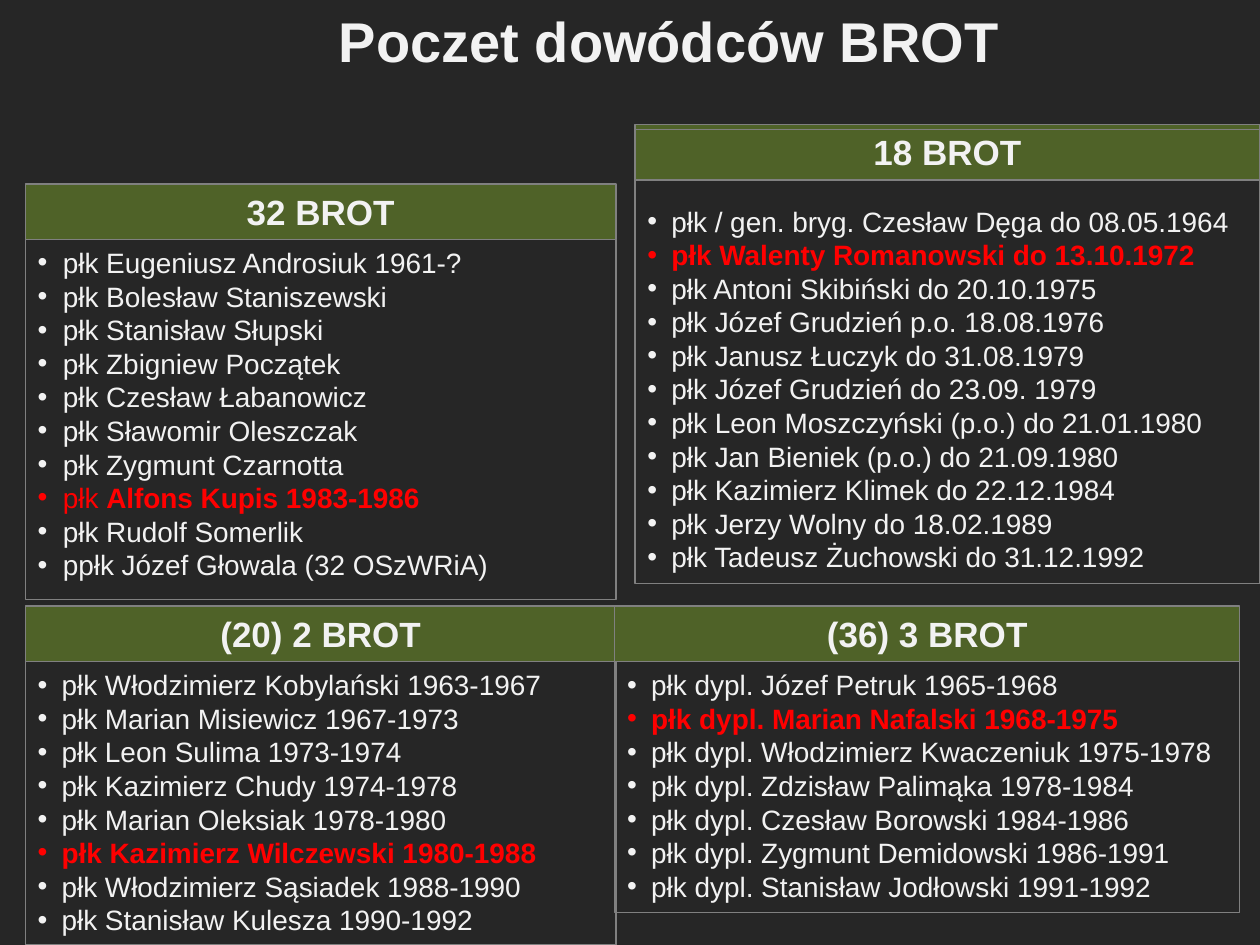
import pptx
import pptx.dml.color
import pptx.enum.shapes
import pptx.enum.text
import pptx.oxml
import pptx.oxml.ns
import pptx.util
import lxml.etree

Inches = pptx.util.Inches
RGB = pptx.dml.color.RGBColor
ALIGN = pptx.enum.text.PP_ALIGN
ANCHOR = pptx.enum.text.MSO_ANCHOR

DARK = RGB(0x26, 0x26, 0x26)
GREEN = RGB(0x4F, 0x62, 0x28)
GREY = RGB(0x80, 0x80, 0x80)
WHITE = RGB(0xF2, 0xF2, 0xF2)
RED = RGB(0xFF, 0x00, 0x00)

HEAD = 0.44  # height of a header bar

# Each unit: header, names; a highlighted name is a (plain, bold) pair
UNIT_18 = ("18 BROT", [
    "płk / gen. bryg. Czesław Dęga do 08.05.1964",
    ("", "płk Walenty Romanowski do 13.10.1972"),
    "płk Antoni Skibiński do 20.10.1975",
    "płk Józef Grudzień p.o. 18.08.1976",
    "płk Janusz Łuczyk do 31.08.1979",
    "płk Józef Grudzień do 23.09. 1979",
    "płk Leon Moszczyński (p.o.) do 21.01.1980",
    "płk Jan Bieniek (p.o.) do 21.09.1980",
    "płk Kazimierz Klimek do 22.12.1984",
    "płk Jerzy Wolny do 18.02.1989",
    "płk Tadeusz Żuchowski do 31.12.1992",
])
UNIT_32 = ("32 BROT", [
    "płk Eugeniusz Androsiuk 1961-?",
    "płk Bolesław Staniszewski",
    "płk Stanisław Słupski",
    "płk Zbigniew Początek",
    "płk Czesław Łabanowicz",
    "płk Sławomir Oleszczak",
    "płk Zygmunt Czarnotta",
    ("płk ", "Alfons Kupis 1983-1986"),
    "płk Rudolf Somerlik",
    "ppłk Józef Głowala (32 OSzWRiA)",
])
UNIT_2 = ("(20) 2 BROT", [
    "płk Włodzimierz Kobylański 1963-1967",
    "płk Marian Misiewicz 1967-1973",
    "płk Leon Sulima 1973-1974",
    "płk Kazimierz Chudy 1974-1978",
    "płk Marian Oleksiak 1978-1980",
    ("", "płk Kazimierz Wilczewski 1980-1988"),
    "płk Włodzimierz Sąsiadek 1988-1990",
    "płk Stanisław Kulesza 1990-1992",
])
UNIT_3 = ("(36) 3 BROT", [
    "płk dypl. Józef Petruk 1965-1968",
    ("", "płk dypl. Marian Nafalski 1968-1975"),
    "płk dypl. Włodzimierz Kwaczeniuk 1975-1978",
    "płk dypl. Zdzisław Palimąka 1978-1984",
    "płk dypl. Czesław Borowski 1984-1986",
    "płk dypl. Zygmunt Demidowski 1986-1991",
    "płk dypl. Stanisław Jodłowski 1991-1992",
])


def add_text(para, text, size=16, color=WHITE, bold=False, align=ALIGN.LEFT):
    para.alignment = align
    run = para.add_run()
    run.text = text
    font = run.font
    font.name, font.size, font.bold = "Arial", pptx.util.Pt(size), bold
    font.color.rgb = color


def add_bullet(para, indent):
    props = para._p.get_or_add_pPr()
    props.set("marL", str(Inches(indent)))
    props.set("indent", str(-Inches(indent)))
    for tag, key, value in (("a:buFont", "typeface", "Arial"),
                            ("a:buChar", "char", "•")):
        item = lxml.etree.SubElement(props, pptx.oxml.ns.qn(tag))
        item.set(key, value)


def add_box(group, left, top, width, height, fill=None):
    box = group.shapes.add_shape(
        pptx.enum.shapes.MSO_SHAPE.RECTANGLE,
        Inches(left), Inches(top), Inches(width), Inches(height))
    box.shadow.inherit = False
    if fill is None:
        box.fill.background()
    else:
        box.fill.solid()
        box.fill.fore_color.rgb = fill
    box.line.color.rgb = GREY
    box.line.width = pptx.util.Pt(0.75)
    frame = box.text_frame
    frame.word_wrap = True
    frame.vertical_anchor = ANCHOR.TOP
    return frame


def add_title(slide, left, top, width, height):
    box = slide.shapes.add_textbox(
        Inches(left), Inches(top), Inches(width), Inches(height))
    frame = box.text_frame
    frame.word_wrap = True
    frame.vertical_anchor = ANCHOR.MIDDLE
    add_text(frame.paragraphs[0], "Poczet dowódców BROT",
             size=32, bold=True, align=ALIGN.CENTER)


def add_unit(slide, unit, left, top, width, height,
             start=HEAD, pad=0.05, indent=0.19):
    """Header bar and name list; the list begins at start below the top."""
    title, names = unit
    group = slide.shapes.add_group_shape()
    # Header bar
    frame = add_box(group, left, top, width, HEAD, GREEN)
    add_text(frame.paragraphs[0], title, size=20, bold=True,
             align=ALIGN.CENTER)
    # Name list
    frame = add_box(group, left, top + start, width, height - start)
    frame.margin_top = Inches(pad)
    for i, name in enumerate(names):
        para = frame.add_paragraph() if i else frame.paragraphs[0]
        add_bullet(para, indent)
        if isinstance(name, str):
            add_text(para, name)
            continue
        plain, strong = name
        if plain:
            add_text(para, plain, color=RED)
        add_text(para, strong, color=RED, bold=True)


def main():
    deck = pptx.Presentation()
    deck.slide_width, deck.slide_height = Inches(10), Inches(7.5)
    slide = deck.slides.add_slide(deck.slide_layouts[6])
    slide.background.fill.solid()
    slide.background.fill.fore_color.rgb = DARK

    add_title(slide, 2.32, 0, 5.98, 0.64)
    # The first list starts behind its header, so its text is padded down
    add_unit(slide, UNIT_18, 5.04, 0.99, 4.96, 3.64, start=0.04, pad=0.59)
    add_unit(slide, UNIT_32, 0.2, 1.46, 4.69, 3.3, indent=0.2)
    add_unit(slide, UNIT_2, 0.2, 4.81, 4.69, 2.69)
    add_unit(slide, UNIT_3, 4.88, 4.81, 4.96, 2.43)
    deck.save("out.pptx")


if __name__ == "__main__":
    main()
